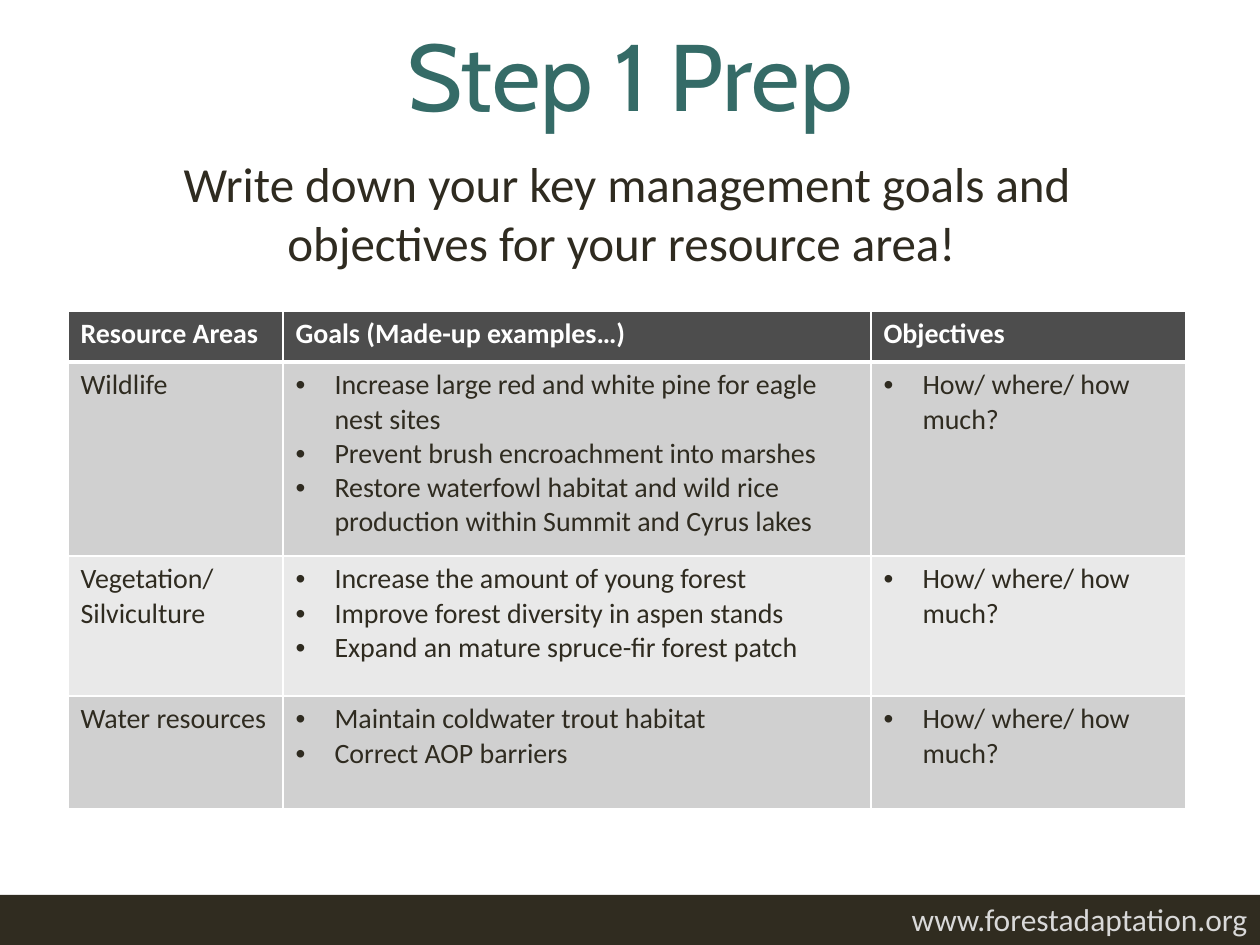
from dataclasses import dataclass

from lxml.etree import SubElement
from pptx import Presentation
from pptx.dml.color import RGBColor
from pptx.enum.shapes import MSO_SHAPE
from pptx.enum.text import MSO_ANCHOR, MSO_AUTO_SIZE, PP_ALIGN
from pptx.oxml.ns import qn
from pptx.util import Emu, Pt

TEAL = RGBColor(0x35, 0x6B, 0x67)
INK = RGBColor(0x2F, 0x2B, 0x20)
BAR = RGBColor(0x30, 0x2C, 0x20)
PALE = RGBColor(0xD9, 0xD9, 0xD9)
WHITE = RGBColor(0xFF, 0xFF, 0xFF)
HEADER = RGBColor(0x4D, 0x4D, 0x4D)
BANDS = (RGBColor(0xD0, 0xD0, 0xD0), RGBColor(0xE9, 0xE9, 0xE9))

PX_PER_INCH = 126
COLUMN_WIDTHS = (215, 588, 315)
HEADER_HEIGHT = 51
BULLET_INDENT = 39
HEADINGS = ("Resource Areas", "Goals (Made-up examples…)", "Objectives")


@dataclass
class ResourceArea:
    name: str
    goals: tuple[str, ...]
    height: int
    objectives: tuple[str, ...] = ("How/ where/ how much?",)


AREAS = (
    ResourceArea("Wildlife", (
        "Increase large red and white pine for eagle nest sites",
        "Prevent brush encroachment into marshes",
        "Restore waterfowl habitat and wild rice production within Summit and Cyrus lakes",
    ), 194),
    ResourceArea("Vegetation/ Silviculture", (
        "Increase the amount of young forest",
        "Improve forest diversity in aspen stands",
        "Expand an mature spruce-fir forest patch",
    ), 140),
    ResourceArea("Water resources", (
        "Maintain coldwater trout habitat",
        "Correct AOP barriers",
    ), 113),
)


def px(length: int) -> Emu:
    return Emu(round(length * 914400 / PX_PER_INCH))


def place(shape, left: int, top: int, width: int, height: int) -> None:
    shape.left, shape.top = px(left), px(top)
    shape.width, shape.height = px(width), px(height)


def style(para, size: int, color: RGBColor, name: str = "Calibri", bold: bool = False) -> None:
    para.font.size = Pt(size)
    para.font.name = name
    para.font.bold = bold
    para.font.color.rgb = color


def set_text(shape, text: str, size: int, color: RGBColor, align, name: str = "Calibri"):
    """Write one styled paragraph and return it."""
    frame = shape.text_frame
    frame.text = text
    frame.auto_size = MSO_AUTO_SIZE.NONE
    para = frame.paragraphs[0]
    para.alignment = align
    para.space_before = Pt(0)
    style(para, size, color, name)
    return para


def set_bullet(para, indent: int, char: str = "") -> None:
    """Give the paragraph a hanging bullet, or none when char is empty."""
    props = para._p.get_or_add_pPr()
    props.set("marL", str(px(indent)))
    props.set("indent", str(-px(indent)))
    if char:
        SubElement(props, qn("a:buFont"), typeface="Arial")
        SubElement(props, qn("a:buChar"), char=char)
    else:
        SubElement(props, qn("a:buNone"))


def set_borders(cell, bottom: int = 1, top: int = 1) -> None:
    props = cell._tc.get_or_add_tcPr()
    for side, points in (("L", 1), ("R", 1), ("T", top), ("B", bottom)):
        line = SubElement(props, qn(f"a:ln{side}"), w=str(Pt(points)))
        fill = SubElement(line, qn("a:solidFill"))
        SubElement(fill, qn("a:srgbClr"), val=str(WHITE))


def fill_cell(cell, lines: tuple[str, ...], fill: RGBColor, color: RGBColor,
              bold: bool = False, bulleted: bool = False) -> None:
    cell.fill.solid()
    cell.fill.fore_color.rgb = fill
    cell.text_frame.text = "\n".join(lines)
    for para in cell.text_frame.paragraphs:
        if bulleted:
            set_bullet(para, BULLET_INDENT, "•")
        style(para, 16, color, bold=bold)


def add_goal_table(page) -> None:
    heights = (HEADER_HEIGHT, *(area.height for area in AREAS))
    table = page.shapes.add_table(
        len(heights), len(COLUMN_WIDTHS), px(68), px(311),
        px(sum(COLUMN_WIDTHS)), px(sum(heights))).table
    for column, width in zip(table.columns, COLUMN_WIDTHS):
        column.width = px(width)
    for row, height in zip(table.rows, heights):
        row.height = px(height)

    # Heading row, set off by a thicker rule
    for cell, heading in zip(table.rows[0].cells, HEADINGS):
        set_borders(cell, bottom=3)
        fill_cell(cell, (heading,), HEADER, WHITE, bold=True)

    # One banded row per resource area
    for index, area in enumerate(AREAS):
        columns = ((area.name,), area.goals, area.objectives)
        for number, lines in enumerate(columns):
            cell = table.cell(index + 1, number)
            set_borders(cell, top=1 if index else 3)
            fill_cell(cell, lines, BANDS[index % 2], INK, bulleted=number > 0)


def main() -> None:
    deck = Presentation()
    deck.slide_width, deck.slide_height = px(1260), px(945)
    page = deck.slides.add_slide(deck.slide_layouts[1])

    # Title and instruction
    title, body = page.placeholders
    place(title, 63, 0, 1134, 147)
    set_text(title, "Step 1 Prep", 54, TEAL, PP_ALIGN.CENTER, "Cabin")
    title.text_frame.vertical_anchor = MSO_ANCHOR.MIDDLE
    place(body, 68, 147, 1118, 714)
    instruction = set_text(
        body, "Write down your key management goals and objectives for your resource area! ",
        28, INK, PP_ALIGN.CENTER)
    set_bullet(instruction, 0)

    # Footer bar with web address
    bar = page.shapes.add_shape(MSO_SHAPE.RECTANGLE, px(0), px(895), px(1260), px(50))
    bar.shadow.inherit = False
    bar.fill.solid()
    bar.fill.fore_color.rgb = BAR
    bar.line.fill.background()
    address = page.shapes.add_textbox(px(896), px(894), px(364), px(51))
    set_text(address, "www.forestadaptation.org", 18, PALE, PP_ALIGN.RIGHT)
    address.text_frame.word_wrap = False

    add_goal_table(page)
    deck.save("out.pptx")


if __name__ == "__main__":
    main()
